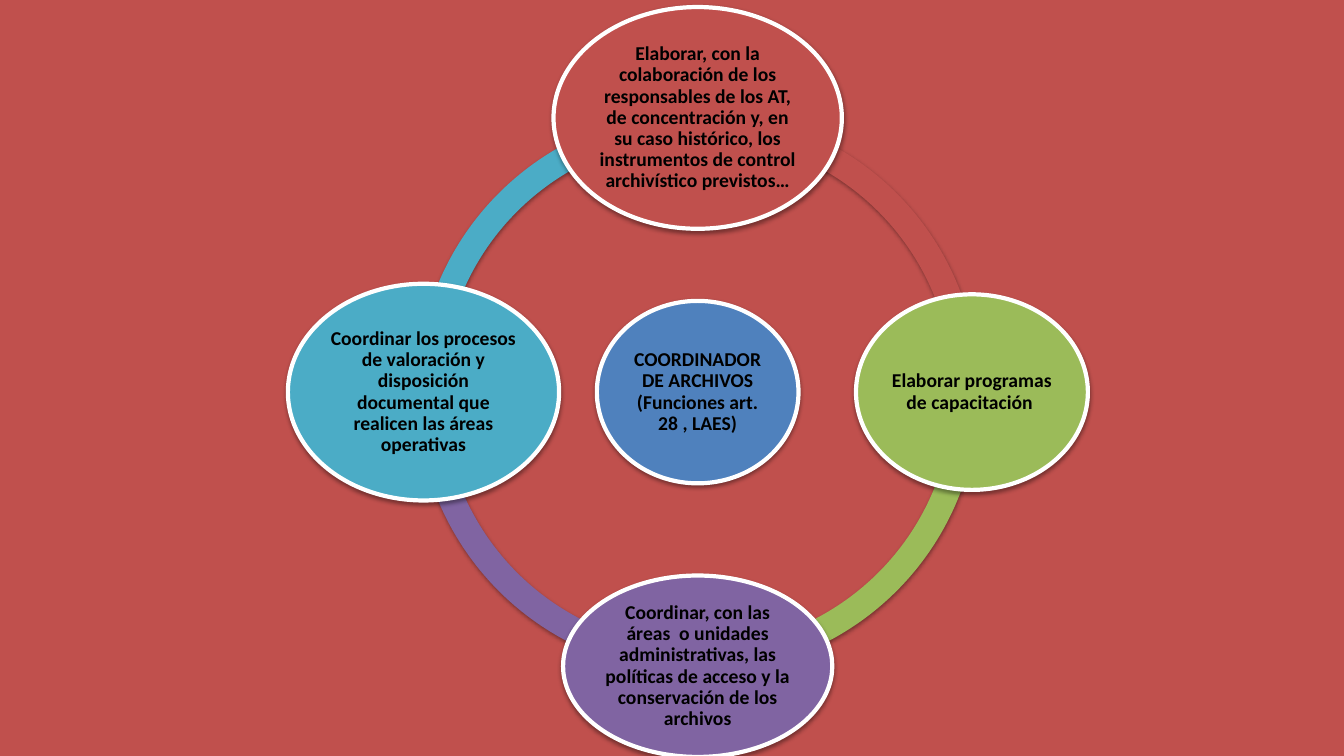
from math import cos, radians, sin

from lxml.etree import SubElement
from pptx import Presentation
from pptx.dml.color import RGBColor
from pptx.enum.shapes import MSO_SHAPE
from pptx.enum.text import MSO_ANCHOR, PP_ALIGN
from pptx.oxml.ns import qn
from pptx.util import Inches, Pt

COLORS = {
    "red": "C0504D", "green": "9BBB59", "purple": "8064A2", "teal": "4BACC6",
    "blue": "4F81BD", "white": "FFFFFF", "black": "000000",
}
CENTER_X, CENTER_Y = 6.92, 3.89
ORBIT = 2.72
RING_SIZE = 5.58

CENTER_TEXT = "COORDINADOR DE ARCHIVOS\v(Funciones art. 28 , LAES)"
FUNCTIONS = [
    (270, "red", 2.86, 2.2,
     "Elaborar, con la colaboración de los responsables de los AT, de "
     "concentración y, en su caso histórico, los instrumentos de control "
     "archivístico previstos…"),
    (0, "green", 2.3, 1.94, "Elaborar programas de capacitación "),
    (90, "purple", 2.67, 1.8,
     "Coordinar, con las áreas  o unidades administrativas, las políticas "
     "de acceso y la conservación de los archivos"),
    (180, "teal", 2.69, 2.15,
     "Coordinar los procesos de valoración y disposición documental que "
     "realicen las áreas operativas"),
]


def rgb(name):
    return RGBColor.from_string(COLORS[name])


def add_shadow(sp):
    sp.shadow.inherit = False
    effects = sp._element.spPr.find(qn("a:effectLst"))
    shadow = SubElement(effects, qn("a:outerShdw"), blurRad=str(Pt(3.1)),
                        dist=str(Pt(1.6)), dir="5400000", rotWithShape="0")
    color = SubElement(shadow, qn("a:srgbClr"), val=COLORS["black"])
    SubElement(color, qn("a:alpha"), val="38000")


def add_centered(s, kind, x, y, w, h, color):
    sp = s.shapes.add_shape(kind, Inches(x - w / 2), Inches(y - h / 2),
                            Inches(w), Inches(h))
    sp.fill.solid()
    sp.fill.fore_color.rgb = rgb(color)
    sp.line.fill.background()
    add_shadow(sp)
    return sp


def add_arc(s, angle, color):
    sp = add_centered(s, MSO_SHAPE.BLOCK_ARC, CENTER_X, CENTER_Y,
                      RING_SIZE, RING_SIZE, color)
    sp.adjustments[0] = angle * 0.6
    sp.adjustments[1] = (angle + 90) % 360 * 0.6
    sp.adjustments[2] = 0.046


def add_node(s, x, y, w, h, color, text):
    sp = add_centered(s, MSO_SHAPE.OVAL, x, y, w, h, color)
    sp.line.color.rgb = rgb("white")
    sp.line.width = Pt(3)
    tf = sp.text_frame
    tf.word_wrap = True
    tf.vertical_anchor = MSO_ANCHOR.MIDDLE
    tf.margin_left = tf.margin_right = Inches(0.02)
    tf.margin_top = tf.margin_bottom = Inches(0.02)
    p = tf.paragraphs[0]
    p.text = text
    p.alignment = PP_ALIGN.CENTER
    p.line_spacing = 0.9
    for r in p.runs:
        r.font.name = "Calibri"
        r.font.size = Pt(14)
        r.font.bold = True
        r.font.color.rgb = rgb("black")
    for br in p._p.findall(qn("a:br")):
        SubElement(br, qn("a:rPr"), sz="1400")


def main():
    """Build the slide on the functions of the archive coordinator."""
    prs = Presentation()
    prs.slide_width, prs.slide_height = Inches(13.33), Inches(7.5)
    s = prs.slides.add_slide(prs.slide_layouts[6])
    s.background.fill.solid()
    s.background.fill.fore_color.rgb = rgb("red")
    for angle, color, *_ in reversed(FUNCTIONS):
        add_arc(s, angle, color)
    add_node(s, CENTER_X, CENTER_Y, 2, 1.81, "blue", CENTER_TEXT)
    for angle, color, w, h, text in FUNCTIONS:
        x = CENTER_X + ORBIT * cos(radians(angle))
        y = CENTER_Y + ORBIT * sin(radians(angle))
        add_node(s, x, y, w, h, color, text)
    prs.save("out.pptx")


if __name__ == "__main__":
    main()
